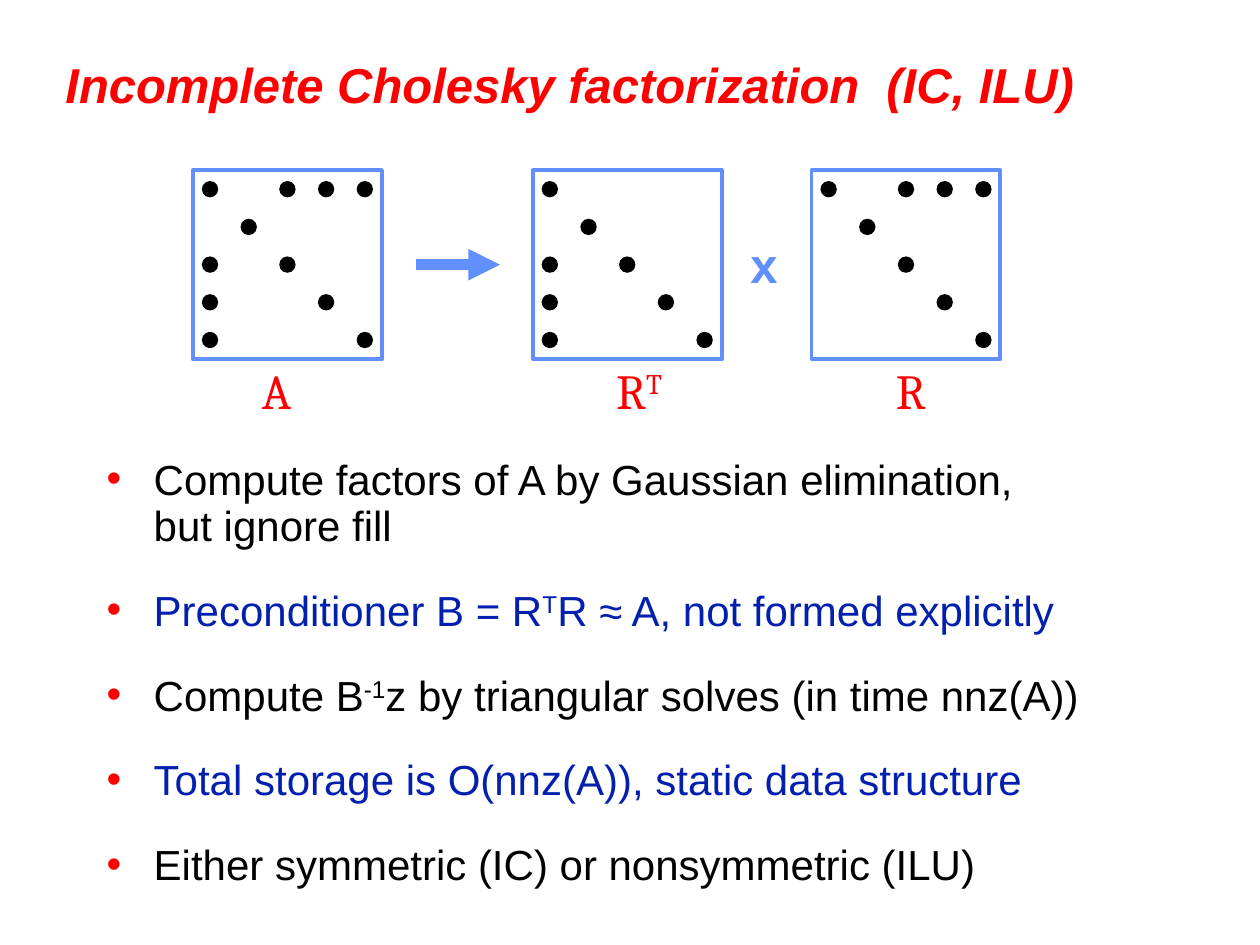
from lxml import etree
from pptx import Presentation
from pptx import util as u
from pptx.dml.color import RGBColor
from pptx.enum import shapes, text
from pptx.oxml.ns import qn

RED, BLUE, NAVY, BLACK = "FF0000", "618FFD", "021FAE", "000000"
DOT, BOX, TOP = 0.33, 3.81, 3.43

# Nonzero patterns, one string per matrix row
FACTORS = [
    (3.89, ["x.xxx", ".x...", "x.x..", "x..x.", "x...x"]),
    (10.74, ["x....", ".x...", "x.x..", "x..x.", "x...x"]),
    (16.36, ["x.xxx", ".x...", "..x..", "...x.", "....x"]),
]

# Left, top, width, height, pieces and font of each label
LABELS = [
    (14.88, 4.6, 1.07, 1.45, ["x"], dict(name="Arial", bold=True), BLUE),
    (5.03, 7.14, 1.22, 1.45, ["A"], dict(name="Cambria"), RED),
    (12.17, 7.14, 1.57, 1.45, ["R", "^T"], dict(name="Cambria"), RED),
    (17.81, 7.14, 1.17, 1.45, ["R"], dict(name="Cambria"), RED),
]

# "^" marks a superscript piece, "\n" a line break
BULLETS = [
    (["Compute factors of A by Gaussian elimination, ", "\n", "but ignore fill"], BLACK),
    (["Preconditioner B = R", "^T", "R ≈ A, not formed explicitly"], NAVY),
    (["Compute B", "^-1", "z by triangular solves (in time nnz(A))"], BLACK),
    (["Total storage is O(nnz(A)), static data structure"], NAVY),
    (["Either symmetric (IC) or nonsymmetric (ILU)"], BLACK),
]


def rgb(value):
    return RGBColor.from_string(value)


def set_attrs(obj, **values):
    for name, value in values.items():
        setattr(obj, name, value)


def add_pieces(p, pieces, color, **font):
    for piece in pieces:
        if piece == "\n":
            p.add_line_break()
            continue
        r = p.add_run()
        r.text = piece.lstrip("^")
        set_attrs(r.font, **font)
        r.font.color.rgb = rgb(color)
        if piece.startswith("^"):
            r.font._element.set("baseline", "30000")


def add_box(s, left, top, width, height, **frame):
    sp = s.shapes.add_textbox(u.Cm(left), u.Cm(top), u.Cm(width), u.Cm(height))
    set_attrs(sp.text_frame, **frame)
    return sp.text_frame


def add_bullet(p, color):
    pPr = p._p.get_or_add_pPr()
    pPr.set("marL", str(u.Cm(0.95)))
    pPr.set("indent", str(u.Cm(-0.95)))
    clr = etree.SubElement(pPr, qn("a:buClr"))
    etree.SubElement(clr, qn("a:srgbClr"), val=color)
    etree.SubElement(pPr, qn("a:buFont"), typeface="Arial")
    etree.SubElement(pPr, qn("a:buChar"), char="•")


def add_bullets(s):
    tf = add_box(s, 1.9, 9.1, 21.59, 9.32, word_wrap=True)
    for i, (pieces, color) in enumerate(BULLETS):
        p = tf.add_paragraph() if i else tf.paragraphs[0]
        set_attrs(p, line_spacing=u.Pt(26.25), space_before=u.Pt(22.3 if i else 0))
        add_bullet(p, RED)
        add_pieces(p, pieces, color, name="Arial", size=u.Pt(24))


def add_matrix(s, left, rows):
    group = s.shapes.add_group_shape()
    for i, row in enumerate(rows):
        for j, mark in enumerate(row):
            if mark != "x":
                continue
            dot = group.shapes.add_shape(
                shapes.MSO_SHAPE.OVAL, u.Cm(left + 0.18 + 0.78 * j),
                u.Cm(TOP + 0.22 + 0.76 * i), u.Cm(DOT), u.Cm(DOT))
            dot.shadow.inherit = False
            dot.fill.solid()
            dot.fill.fore_color.rgb = rgb(BLACK)
            dot.line.fill.background()
    frame = group.shapes.add_shape(
        shapes.MSO_SHAPE.RECTANGLE, u.Cm(left), u.Cm(TOP), u.Cm(BOX), u.Cm(BOX))
    frame.shadow.inherit = False
    frame.fill.background()
    frame.line.color.rgb = rgb(BLUE)
    frame.line.width = u.Pt(2.25)


def add_arrow(s, x1, x2, y):
    line = s.shapes.add_connector(
        shapes.MSO_CONNECTOR.STRAIGHT, u.Cm(x1), u.Cm(y), u.Cm(x2), u.Cm(y))
    line.line.color.rgb = rgb(BLUE)
    line.line.width = u.Pt(6)
    etree.SubElement(line.line._get_or_add_ln(), qn("a:tailEnd"), type="triangle")
    etree.SubElement(line._element.spPr, qn("a:effectLst"))


def main():
    prs = Presentation()
    set_attrs(prs, slide_width=u.Cm(25.4), slide_height=u.Cm(19.05))
    s = prs.slides.add_slide(prs.slide_layouts[6])

    # Title
    tf = add_box(s, 1.07, 0.84, 23.7, 1.7, word_wrap=True,
                 vertical_anchor=text.MSO_ANCHOR.MIDDLE)
    add_pieces(tf.paragraphs[0], ["Incomplete Cholesky factorization  (IC, ILU)"], RED,
               name="Arial", size=u.Pt(28), bold=True, italic=True)

    # Body
    add_bullets(s)

    # Factorization diagram
    for left, rows in FACTORS:
        add_matrix(s, left, rows)
    add_arrow(s, 8.38, 10.08, TOP + BOX / 2)
    for left, top, width, height, pieces, font, color in LABELS:
        tf = add_box(s, left, top, width, height, word_wrap=False,
                     auto_size=text.MSO_AUTO_SIZE.SHAPE_TO_FIT_TEXT)
        add_pieces(tf.paragraphs[0], pieces, color, size=u.Pt(28), **font)

    prs.save("out.pptx")


if __name__ == "__main__":
    main()
